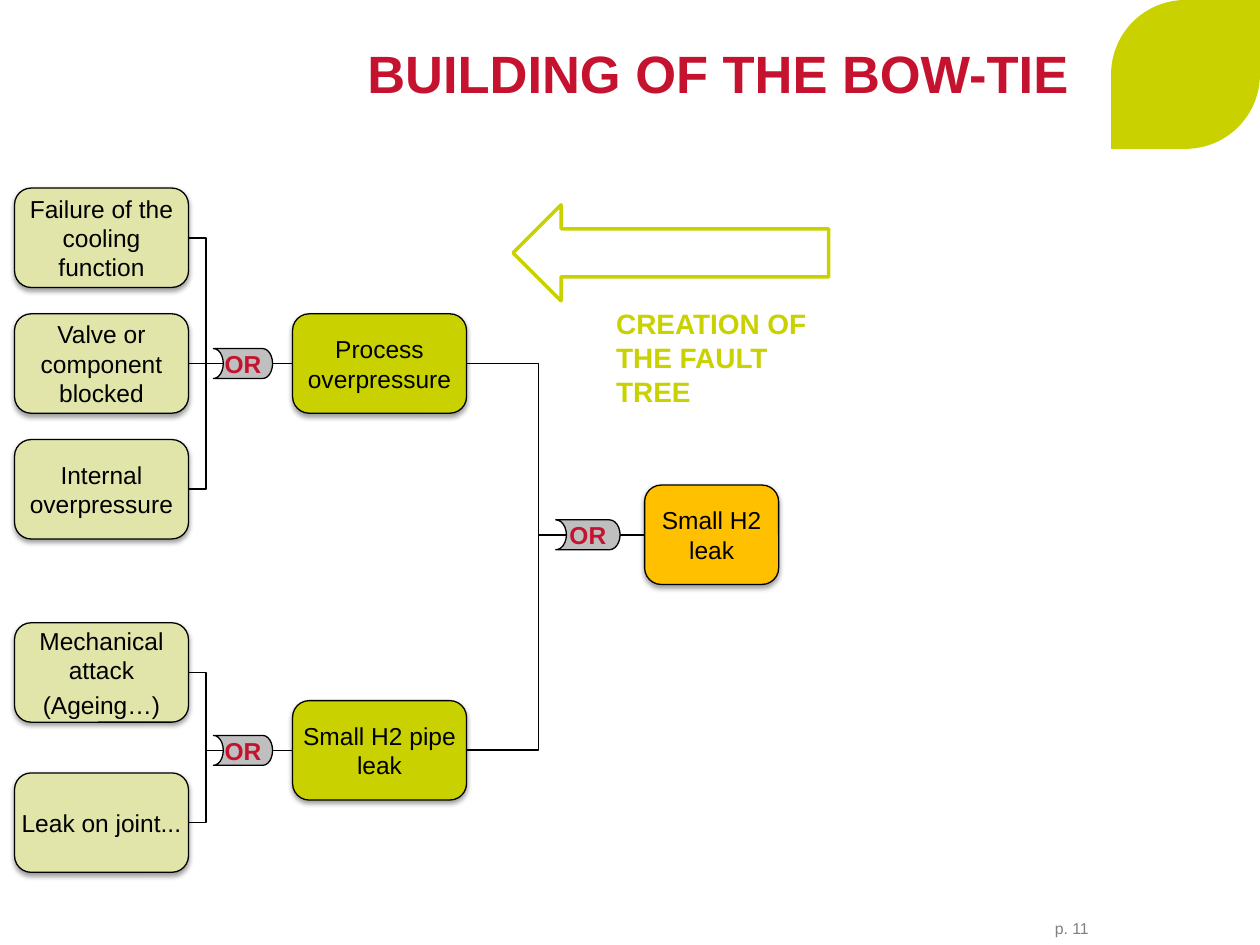
from collections import namedtuple

from lxml import etree
from pptx import Presentation
from pptx.dml.color import RGBColor
from pptx.enum.shapes import MSO_CONNECTOR, MSO_SHAPE
from pptx.enum.text import MSO_ANCHOR, PP_ALIGN
from pptx.oxml import parse_xml
from pptx.oxml.ns import nsdecls, qn
from pptx.util import Pt

ELBOW, STRAIGHT = MSO_CONNECTOR.ELBOW, MSO_CONNECTOR.STRAIGHT
ROUNDED, GATE = MSO_SHAPE.ROUNDED_RECTANGLE, MSO_SHAPE.FLOWCHART_STORED_DATA
LEAF, LEFT_ARROW = MSO_SHAPE.ROUND_2_DIAG_RECTANGLE, MSO_SHAPE.LEFT_ARROW
TOP, MIDDLE, BOTTOM = MSO_ANCHOR.TOP, MSO_ANCHOR.MIDDLE, MSO_ANCHOR.BOTTOM
LEFT, CENTER, RIGHT = PP_ALIGN.LEFT, PP_ALIGN.CENTER, PP_ALIGN.RIGHT

BLACK = RGBColor(0x00, 0x00, 0x00)
WHITE = RGBColor(0xFF, 0xFF, 0xFF)
RED = RGBColor(0xC4, 0x12, 0x2F)
LIME = RGBColor(0xC9, 0xD2, 0x00)
PALE_LIME = RGBColor(0xE1, 0xE5, 0xAA)
AMBER = RGBColor(0xFF, 0xC0, 0x00)
GATE_GREY = RGBColor(0xBF, 0xBF, 0xBF)
PAGE_GREY = RGBColor(0x80, 0x80, 0x80)

EVENT_WIDTH, EVENT_HEIGHT = 99.4, 56.8
GATE_HEIGHT = 17.1
PLAIN = {"name": "Arial", "size": Pt(14), "bold": False}
STRONG = {**PLAIN, "bold": True}

Box = namedtuple("Box", "left top width height")


def points(box):
    return [Pt(length) for length in box]


def write(frame, text, font, color, align=CENTER, anchor=MIDDLE, inset=0, wrap=True):
    frame.word_wrap = wrap
    frame.vertical_anchor = anchor
    for side in ("left", "top", "right", "bottom"):
        setattr(frame, f"margin_{side}", Pt(inset))
    frame.text = text
    for index, paragraph in enumerate(frame.paragraphs):
        paragraph.alignment = align
        paragraph.space_before = Pt(2.8 if index else 0)
        for name, value in font.items():
            setattr(paragraph.font, name, value)
        paragraph.font.color.rgb = color


def add_preset(slide, preset, box, fill, line=None, width=0.75):
    shape = slide.shapes.add_shape(preset, *points(box))
    shape.shadow.inherit = False
    shape.fill.solid()
    shape.fill.fore_color.rgb = fill
    if line is None:
        shape.line.fill.background()
    else:
        shape.line.color.rgb = line
        shape.line.width = Pt(width)
    return shape


def add_event(slide, box, text, fill):
    """Rounded box with a soft shadow below it."""
    event = add_preset(slide, ROUNDED, box, fill, BLACK)
    effects = event._element.spPr.find(qn("a:effectLst"))
    effects.append(parse_xml(
        f'<a:outerShdw {nsdecls("a")} blurRad="{Pt(3.1)}" dist="{Pt(1.6)}" dir="5400000" '
        'rotWithShape="0"><a:srgbClr val="000000"><a:alpha val="38000"/></a:srgbClr>'
        '</a:outerShdw>'))
    write(event.text_frame, text, PLAIN, BLACK)
    return event


def add_link(slide, kind, start, end, width):
    link = slide.shapes.add_connector(kind, *points(start + end))
    link.line.color.rgb = BLACK
    link.line.width = Pt(width)
    etree.SubElement(link._element.spPr, qn("a:effectLst"))
    return link


def join_by_or(slide, inputs, output, gate_left, gate_width, width, bend=0.5):
    """Link the input events through an OR gate to the output event."""
    center = output.top.pt + output.height.pt / 2
    mouth = (gate_left + gate_width / 6, center)
    for event in inputs:
        start = (event.left.pt + event.width.pt, event.top.pt + event.height.pt / 2)
        level = abs(start[1] - center) < 0.1
        link = add_link(slide, STRAIGHT if level else ELBOW, start, mouth, width)
        link.begin_connect(event, 3)
        if not level:
            geometry = link._element.spPr.find(qn("a:prstGeom"))
            geometry.get_or_add_avLst().append(parse_xml(
                f'<a:gd {nsdecls("a")} name="adj1" fmla="val {round(bend * 100000)}"/>'))
    exit_point = (gate_left + gate_width, center)
    link = add_link(slide, STRAIGHT, exit_point, (output.left.pt, center), width)
    link.end_connect(output, 1)

    gate_box = Box(gate_left, center - GATE_HEIGHT / 2, gate_width, GATE_HEIGHT)
    gate = add_preset(slide, GATE, gate_box, GATE_GREY, BLACK)
    gate._element.spPr.find(qn("a:xfrm")).set("flipH", "1")
    write(gate.text_frame, "OR", STRONG, RED, wrap=False)


def add_branch(slide, box, causes, result, width, result_shift=0):
    """Causes stacked down the left of the box, their result on the right."""
    step = (box.height - EVENT_HEIGHT) / (len(causes) - 1)
    cause_events = [
        add_event(slide, Box(box.left, box.top + index * step, EVENT_WIDTH, EVENT_HEIGHT),
                  cause, PALE_LIME)
        for index, cause in enumerate(causes)]
    result_box = Box(box.left + box.width - EVENT_WIDTH,
                     box.top + (box.height - EVENT_HEIGHT) / 2 + result_shift,
                     EVENT_WIDTH, EVENT_HEIGHT)
    result_event = add_event(slide, result_box, result, LIME)
    join_by_or(slide, cause_events, result_event, box.left + 113.7, 33.8, width)
    return result_event


def add_fault_tree(slide, box):
    branch_width = 258.3
    overpressure = add_branch(
        slide, Box(box.left, box.top, branch_width, 200.5),
        ["Failure of the cooling function", "Valve or component blocked",
         "Internal overpressure"], "Process overpressure", 1)
    pipe_leak = add_branch(
        slide, Box(box.left, box.top + box.height - 142.6, branch_width, 142.6),
        ["Mechanical attack\n(Ageing…)", "Leak on joint..."], "Small H2 pipe leak",
        0.75, result_shift=1.6)
    leak_width = 76.6
    leak_box = Box(box.left + box.width - leak_width, box.top + 169.7,
                   leak_width, EVENT_HEIGHT)
    leak = add_event(slide, leak_box, "Small H2 leak", AMBER)
    join_by_or(slide, [overpressure, pipe_leak], leak, box.left + 309.3, 36.8, 1, bend=0.72)


def add_direction(slide, box):
    """Arrow pointing back to the causes, with its caption below."""
    arrow_height = 54.9
    arrow_box = Box(box.left, box.top, box.width, arrow_height)
    add_preset(slide, LEFT_ARROW, arrow_box, WHITE, LIME, 2)
    caption_box = Box(box.left + 51.8, box.top + arrow_height,
                      123.1, box.height - arrow_height)
    caption = slide.shapes.add_textbox(*points(caption_box))
    write(caption.text_frame, "CREATION OF THE FAULT TREE", {**STRONG, "size": Pt(16)},
          LIME, LEFT, TOP)
    caption.text_frame.margin_left = caption.text_frame.margin_right = Pt(7.2)
    caption.text_frame.margin_top = caption.text_frame.margin_bottom = Pt(3.6)


def add_heading(slide, box):
    title = slide.shapes.title
    title.left, title.top, title.width, title.height = points(box)
    write(title.text_frame, "BUILDING OF THE BOW-TIE", {**STRONG, "size": Pt(30)},
          RED, RIGHT, BOTTOM)
    title.text_frame.margin_bottom = Pt(31)
    title.text_frame.paragraphs[0].line_spacing = 0.9


def add_page_frame(slide, leaf_box, number_box):
    leaf = add_preset(slide, LEAF, leaf_box, LIME)
    leaf.adjustments[0] = 0.5
    number = slide.shapes.add_textbox(*points(number_box))
    write(number.text_frame, "p. 11", {**PLAIN, "size": Pt(9)}, PAGE_GREY,
          RIGHT, BOTTOM, wrap=False)


def main():
    deck = Presentation()
    deck.slide_width, deck.slide_height = Pt(720), Pt(540)
    slide = deck.slides.add_slide(deck.slide_layouts[5])
    add_page_frame(slide, Box(634.9, 0, 85.1, 85.1), Box(594.7, 525.6, 27.4, 10.1))
    add_heading(slide, Box(157.7, 20.2, 453.2, 70.6))
    add_fault_tree(slide, Box(8.3, 107.5, 436.7, 391))
    add_direction(slide, Box(293.2, 117, 180.4, 120.6))
    deck.save("out.pptx")


if __name__ == "__main__":
    main()
